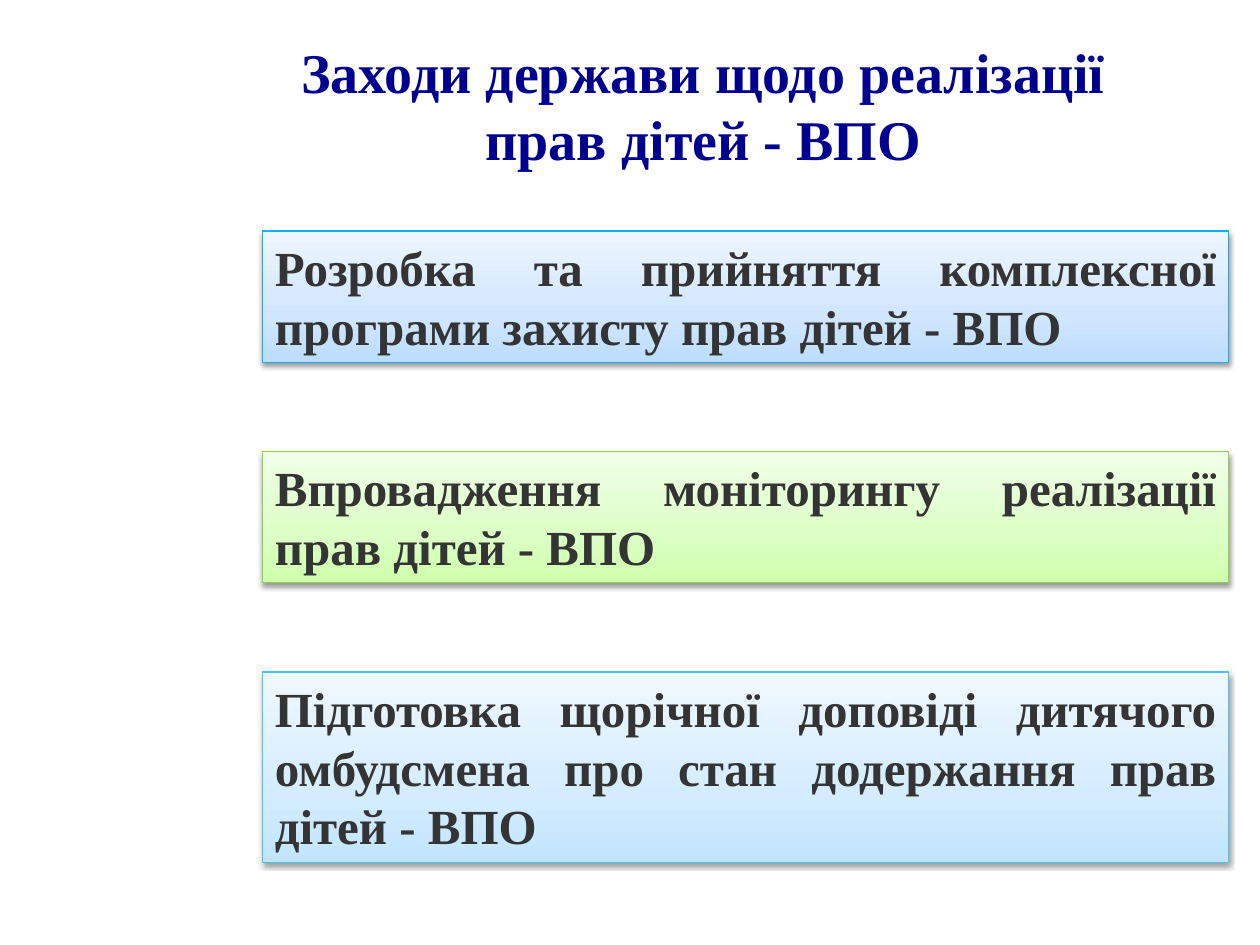
"""Build a slide listing state measures for the rights of displaced children."""
from copy import deepcopy
from dataclasses import dataclass

from lxml.etree import SubElement
from pptx import Presentation
from pptx.dml.color import RGBColor
from pptx.enum.shapes import MSO_SHAPE
from pptx.enum.text import MSO_ANCHOR, MSO_AUTO_SIZE, PP_ALIGN
from pptx.oxml.ns import qn
from pptx.shapes.autoshape import Shape
from pptx.slide import Slide
from pptx.util import Pt

FONT_NAME = "Times New Roman"
TITLE_COLOR = RGBColor(0x00, 0x00, 0x90)
TEXT_COLOR = RGBColor(0x34, 0x34, 0x34)
STOP_POSITIONS = (0, 0.35, 1)
MEASURE_LEFT, MEASURE_TOP, MEASURE_WIDTH, MEASURE_PITCH = 150, 132, 552, 126


@dataclass(frozen=True)
class Measure:
    text: str
    height: float
    line_color: RGBColor
    gradient: tuple[RGBColor, RGBColor, RGBColor]


MEASURES = (
    Measure(
        "Розробка та прийняття комплексної програми захисту прав дітей - ВПО",
        75,
        RGBColor(0x09, 0xB0, 0xFD),
        (RGBColor(0xBC, 0xDD, 0xFF), RGBColor(0xD0, 0xE6, 0xFF), RGBColor(0xED, 0xF5, 0xFF)),
    ),
    Measure(
        "Впровадження моніторингу реалізації прав дітей - ВПО",
        75,
        RGBColor(0x8F, 0xCF, 0x4B),
        (RGBColor(0xCE, 0xFF, 0xAC), RGBColor(0xDB, 0xFF, 0xC4), RGBColor(0xF1, 0xFF, 0xE9)),
    ),
    Measure(
        "Підготовка щорічної доповіді дитячого омбудсмена про стан додержання прав дітей - ВПО",
        108.7,
        RGBColor(0x46, 0xC4, 0xFD),
        (RGBColor(0xC1, 0xE5, 0xFF), RGBColor(0xD3, 0xEC, 0xFF), RGBColor(0xEF, 0xF8, 0xFF)),
    ),
)


def write_text(shape: Shape, text: str, size: float, color: RGBColor, alignment: PP_ALIGN) -> None:
    text_frame = shape.text_frame
    text_frame.text = text
    text_frame.word_wrap = True
    text_frame.auto_size = MSO_AUTO_SIZE.SHAPE_TO_FIT_TEXT
    text_frame.vertical_anchor = MSO_ANCHOR.TOP
    paragraph = text_frame.paragraphs[0]
    paragraph.alignment = alignment
    font = paragraph.runs[0].font
    font.name = FONT_NAME
    font.size = Pt(size)
    font.bold = True
    font.color.rgb = color


def fill_gradient(shape: Shape, colors: tuple[RGBColor, RGBColor, RGBColor]) -> None:
    shape.fill.gradient()
    shape.fill.gradient_angle = 90
    stop_list = next(shape.element.spPr.iter(qn("a:gsLst")))
    stop_list.append(deepcopy(stop_list[-1]))
    for stop, position, color in zip(shape.fill.gradient_stops, STOP_POSITIONS, colors):
        stop.position = position
        stop.color.rgb = color


def add_shadow(shape: Shape) -> None:
    shape.shadow.inherit = False
    effects = shape.element.spPr.find(qn("a:effectLst"))
    shadow = SubElement(
        effects, qn("a:outerShdw"), blurRad=str(Pt(3.1)), dist=str(Pt(1.6)), dir="5400000", rotWithShape="0"
    )
    color = SubElement(shadow, qn("a:srgbClr"), val="000000")
    SubElement(color, qn("a:alpha"), val="38000")


def add_measure(slide: Slide, measure: Measure, top: float) -> None:
    shape = slide.shapes.add_shape(
        MSO_SHAPE.RECTANGLE, Pt(MEASURE_LEFT), Pt(top), Pt(MEASURE_WIDTH), Pt(measure.height)
    )
    fill_gradient(shape, measure.gradient)
    shape.line.color.rgb = measure.line_color
    shape.line.width = Pt(0.75)
    add_shadow(shape)
    write_text(shape, measure.text, 28, TEXT_COLOR, PP_ALIGN.JUSTIFY)


def main() -> None:
    presentation = Presentation()
    presentation.slide_width = Pt(720)
    presentation.slide_height = Pt(540)
    slide = presentation.slides.add_slide(presentation.slide_layouts[6])
    for index, measure in enumerate(MEASURES):
        add_measure(slide, measure, MEASURE_TOP + index * MEASURE_PITCH)
    title = slide.shapes.add_textbox(Pt(156), Pt(18), Pt(492), Pt(85))
    write_text(title, "Заходи держави щодо реалізації прав дітей - ВПО", 32, TITLE_COLOR, PP_ALIGN.CENTER)
    presentation.save("out.pptx")


if __name__ == "__main__":
    main()
